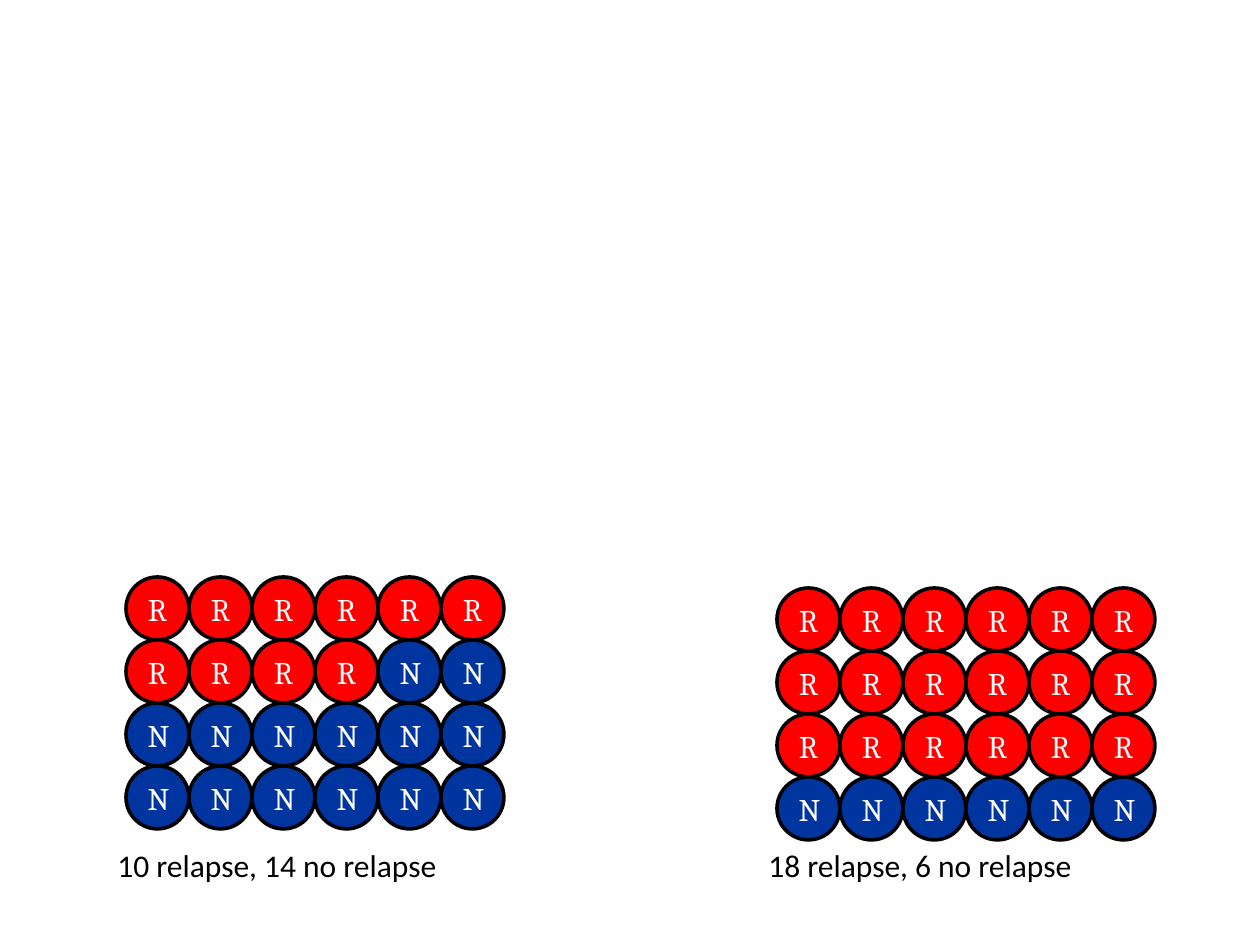
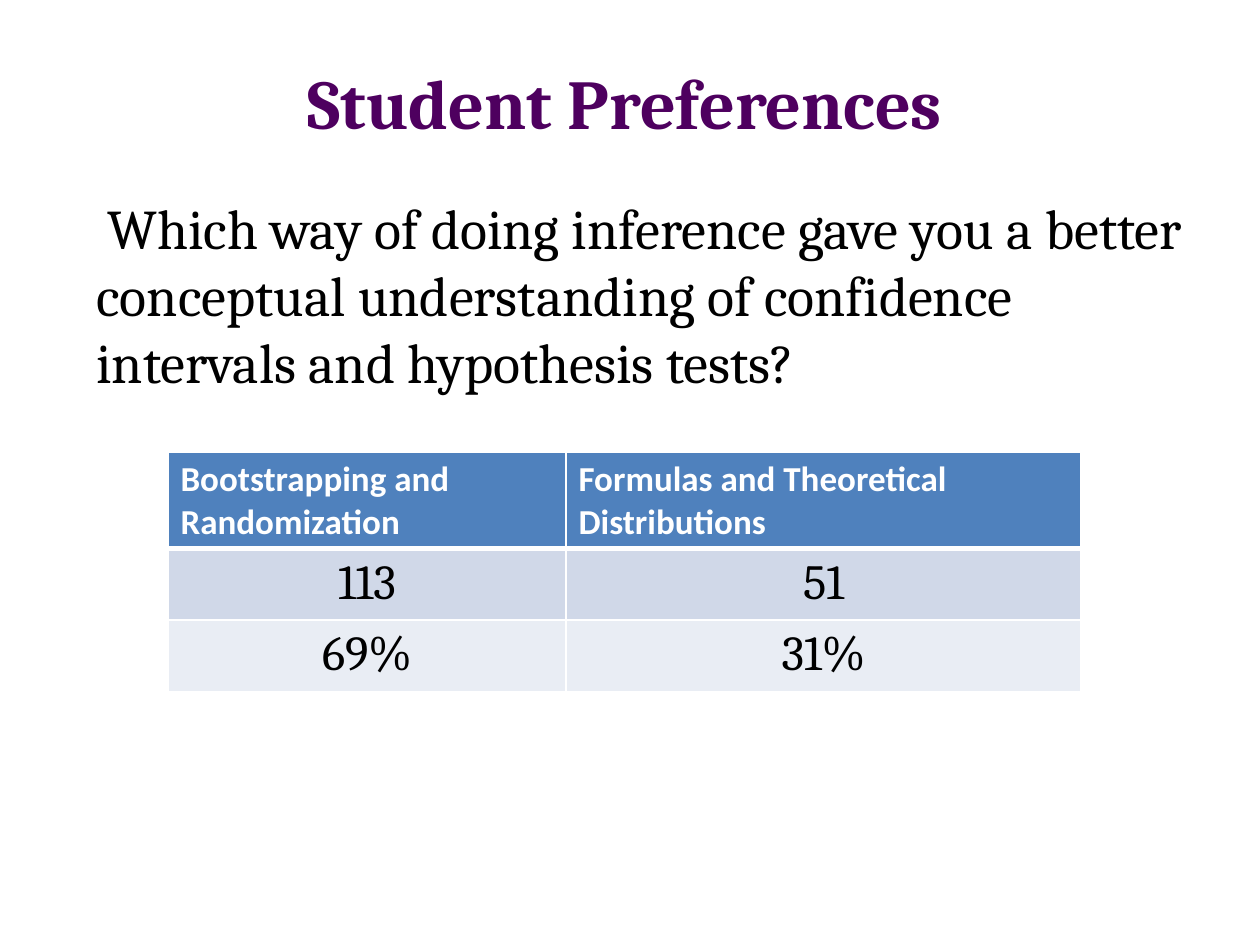
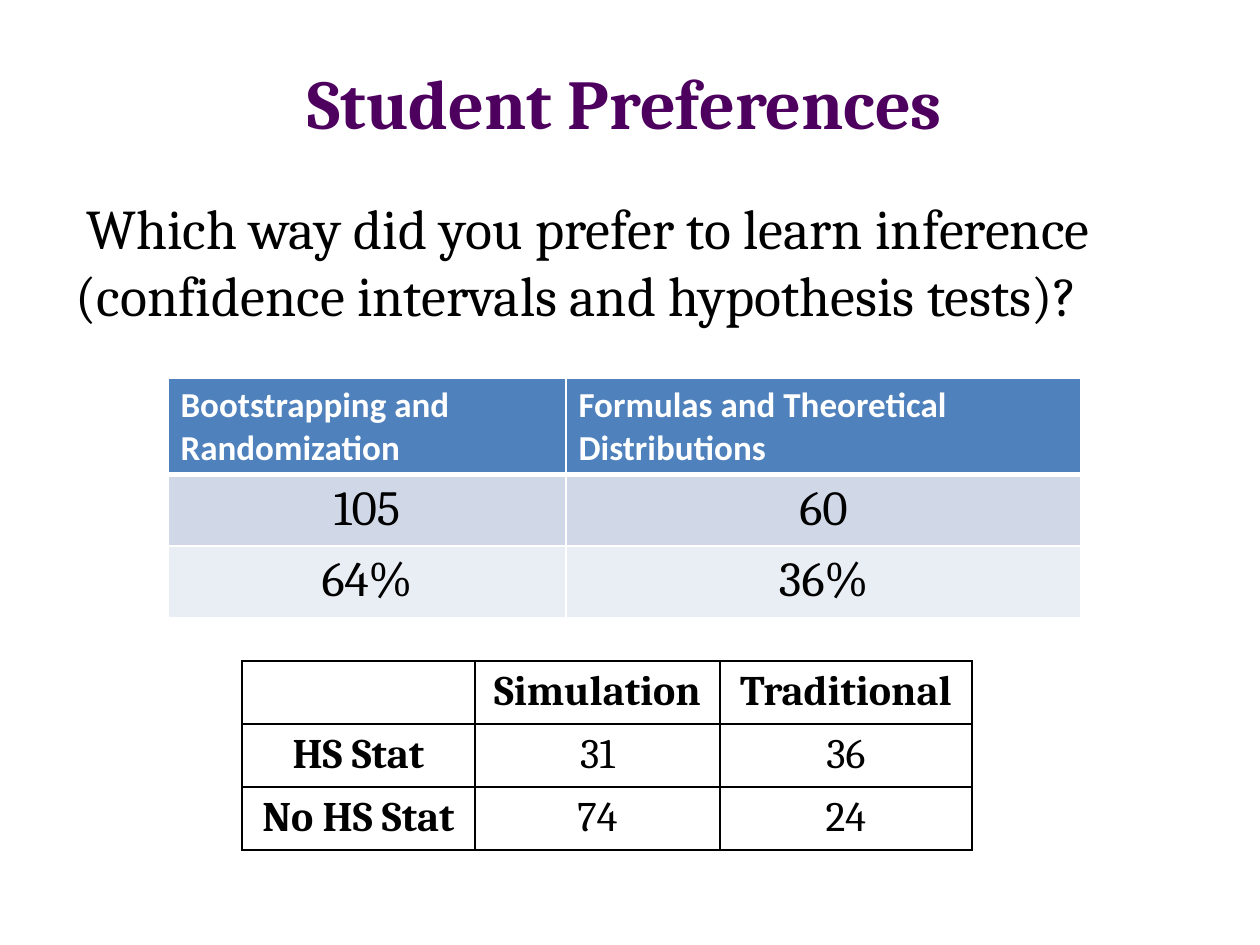
from lxml import etree
from pptx import Presentation
from pptx.dml.color import RGBColor
from pptx.enum.shapes import MSO_SHAPE
from pptx.enum.text import MSO_ANCHOR, PP_ALIGN
from pptx.oxml.ns import qn
from pptx.util import Emu, Pt

OVAL = MSO_SHAPE.OVAL
TOP, MIDDLE = MSO_ANCHOR.TOP, MSO_ANCHOR.MIDDLE
LEFT, CENTER = PP_ALIGN.LEFT, PP_ALIGN.CENTER

# Content
COLORS = {
    "black": "000000", "white": "FFFFFF", "title": "4E005F",
    "relapse": "FF0000", "no relapse": "00349E",
    "header": "4F81BD", "dark band": "D0D8E8", "light band": "E9EDF4",
}
OUTCOMES = {"R": "relapse", "N": "no relapse"}
GROUPS = [
    {"left": 126, "top": 577, "caption_left": 105, "R": 10, "N": 14},
    {"left": 777, "top": 588, "caption_left": 756, "R": 18, "N": 6},
]
TITLE = "Student Preferences"
METHODS = ["Bootstrapping and Randomization", "Formulas and Theoretical Distributions"]
SURVEYS = [
    {
        "question": "Which way of doing inference gave you a better conceptual "
                    "understanding of confidence intervals and hypothesis tests?",
        "question_box": (84, 187, 1124, 585),
        "votes": [["113", "51"], ["69%", "31%"]],
        "votes_top": 452,
    },
    {
        "question": "Which way did you prefer to learn inference "
                    "(confidence intervals and hypothesis tests)?",
        "question_box": (63, 187, 1124, 418),
        "votes": [["105", "60"], ["64%", "36%"]],
        "votes_top": 378,
        "background": [["", "Simulation", "Traditional"],
                       ["HS Stat", "31", "36"],
                       ["No HS Stat", "74", "24"]],
    },
]

# Layout, in px
SCALE = 914400 // 126
SLIDE_SIZE = (1260, 945)
CIRCLE, CIRCLES_PER_ROW = 63, 6
CAPTION_TOP, CAPTION_SIZE = 840, (472, 50)
TITLE_BOX = (63, 53, 1124, 168)
QUESTION_INDENT = 11
VOTES_LEFT, VOTES_COLUMNS, VOTES_ROWS = 168, (398, 515), (96, 71, 71)
BACKGROUND_AT, BACKGROUND_COLUMNS, BACKGROUND_ROWS = (242, 661), (233, 245, 252), (63, 63, 63)


def px(*lengths):
    return [Emu(length * SCALE) for length in lengths]


def color(name):
    return RGBColor.from_string(COLORS[name])


def write(frame, text, size=18, font="Cambria", ink="black", bold=False,
          align=LEFT, anchor=TOP, after=0, indent=0):
    frame.word_wrap = True
    frame.vertical_anchor = anchor
    paragraph = frame.paragraphs[0]
    paragraph.alignment = align
    paragraph.space_after = Pt(after)
    if indent:
        paragraph._p.get_or_add_pPr().set("indent", str(indent * SCALE))
    run = paragraph.add_run()
    run.text = text
    run.font.size, run.font.name, run.font.bold = Pt(size), font, bold
    run.font.color.rgb = color(ink)


def add_text(slide, box, text, **style):
    write(slide.shapes.add_textbox(*px(*box)).text_frame, text, **style)


def add_circle(slide, left, top, letter):
    shape = slide.shapes.add_shape(OVAL, *px(left, top, CIRCLE, CIRCLE))
    shape.shadow.inherit = False
    shape.fill.solid()
    shape.fill.fore_color.rgb = color(OUTCOMES[letter])
    shape.line.color.rgb = color("black")
    shape.line.width = Pt(2)
    write(shape.text_frame, letter, ink="white", align=CENTER, anchor=MIDDLE)


def add_group(slide, group):
    letters = "".join(letter * group[letter] for letter in OUTCOMES)
    for index, letter in enumerate(letters):
        row, column = divmod(index, CIRCLES_PER_ROW)
        add_circle(slide, group["left"] + column * CIRCLE, group["top"] + row * CIRCLE, letter)
    caption = ", ".join(f"{group[letter]} {name}" for letter, name in OUTCOMES.items())
    add_text(slide, (group["caption_left"], CAPTION_TOP, *CAPTION_SIZE), caption, font="Calibri")


def set_borders(cell, ink, widths):
    properties = cell._tc.get_or_add_tcPr()
    for side, width in zip("LRTB", widths):
        line = etree.SubElement(properties, qn(f"a:ln{side}"), w=str(Pt(width)))
        fill = etree.SubElement(line, qn("a:solidFill"))
        etree.SubElement(fill, qn("a:srgbClr"), val=COLORS[ink])


def add_table(slide, at, columns, heights, rows, format_cell):
    """format_cell(row, column) gives fill, border colour, border widths and text style."""
    frame = slide.shapes.add_table(len(rows), len(columns), *px(*at, sum(columns), sum(heights)))
    table = frame.table
    table.first_row = table.horz_banding = False
    for column, width in zip(table.columns, px(*columns)):
        column.width = width
    for row, height in zip(table.rows, px(*heights)):
        row.height = height
    for i, texts in enumerate(rows):
        for j, text in enumerate(texts):
            fill, border, widths, style = format_cell(i, j)
            cell = table.cell(i, j)
            set_borders(cell, border, widths)
            cell.fill.solid()
            cell.fill.fore_color.rgb = color(fill)
            if text:
                write(cell.text_frame, text, **style)


def votes_format(row, column):
    if row == 0:
        return "header", "white", (1, 1, 1, 3), dict(size=20, font="Calibri", ink="white", bold=True)
    fill = "dark band" if row == 1 else "light band"
    return fill, "white", (1, 1, 3 if row == 1 else 1, 1), dict(size=28, align=CENTER)


def background_format(row, column):
    style = dict(size=24, bold=row == 0 or column == 0, align=CENTER)
    return "white", "black", (1, 1, 1, 1), style


def add_survey(slide, survey):
    add_text(slide, TITLE_BOX, TITLE, size=40, ink="title", bold=True, align=CENTER)
    add_text(slide, survey["question_box"], survey["question"],
             size=32, after=18, indent=QUESTION_INDENT)
    add_table(slide, (VOTES_LEFT, survey["votes_top"]), VOTES_COLUMNS, VOTES_ROWS,
              [METHODS, *survey["votes"]], votes_format)
    if "background" in survey:
        add_table(slide, BACKGROUND_AT, BACKGROUND_COLUMNS, BACKGROUND_ROWS,
                  survey["background"], background_format)


def main():
    presentation = Presentation()
    presentation.slide_width, presentation.slide_height = px(*SLIDE_SIZE)
    blank = presentation.slide_layouts[6]

    # Relapse counts in two groups
    slide = presentation.slides.add_slide(blank)
    for group in GROUPS:
        add_group(slide, group)

    # Survey results
    for survey in SURVEYS:
        add_survey(presentation.slides.add_slide(blank), survey)

    presentation.save("out.pptx")


if __name__ == "__main__":
    main()
